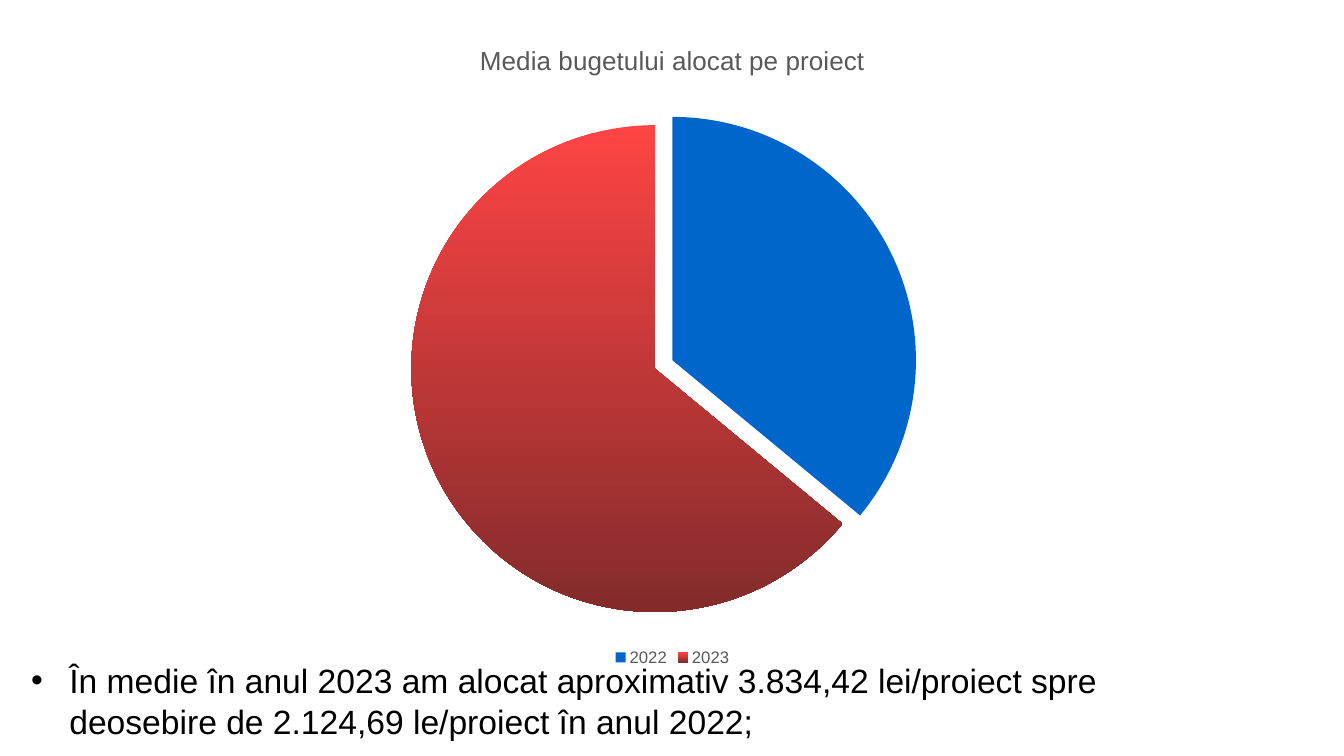
from pptx import Presentation
from pptx.chart.data import CategoryChartData
from pptx.dml.color import RGBColor
from pptx.enum.chart import XL_CHART_TYPE, XL_LEGEND_POSITION
from pptx.oxml import parse_xml
from pptx.oxml.ns import nsdecls
from pptx.util import Inches, Pt

COLORS = {
    "text": "000000",
    "label": "595959",
    "y2022": "0066CC",
    "y2023_top": "FE4444",
    "y2023_bottom": "832B2B",
}
TITLE = "Media bugetului alocat pe proiect"


def style_font(font, size, color):
    font.name = "Arial"
    font.size = Pt(size)
    font.bold = False
    font.color.rgb = RGBColor.from_string(COLORS[color])


prs = Presentation()
prs.slide_width, prs.slide_height = Inches(13.33), Inches(7.5)
s = prs.slides.add_slide(prs.slide_layouts[6])

# Remark under the chart
tb = s.shapes.add_textbox(Inches(0.21), Inches(6.5), Inches(12), Inches(1))
tf = tb.text_frame
tf.word_wrap = True
p = tf.paragraphs[0]
pPr = p._p.get_or_add_pPr()
pPr.set("marL", str(Inches(0.38)))
pPr.set("indent", str(-Inches(0.38)))
pPr.append(parse_xml(f'<a:buFont {nsdecls("a")} typeface="Arial"/>'))
pPr.append(parse_xml(f'<a:buChar {nsdecls("a")} char="•"/>'))
r = p.add_run()
r.text = ("În medie în anul 2023 am alocat aproximativ 3.834,42 lei/proiect "
          "spre deosebire de 2.124,69 le/proiect în anul 2022;")
style_font(r.font, 24, "text")

# Pie chart of the average budget
data = CategoryChartData()
data.categories = ["2022", "2023"]
data.add_series(TITLE, (36, 64))
chart = s.shapes.add_chart(XL_CHART_TYPE.PIE, Inches(0.92), Inches(0.2),
                           Inches(11.5), Inches(6.45), data).chart
style_font(chart.font, 10, "text")

chart.has_title = True
r = chart.chart_title.text_frame.paragraphs[0].add_run()
r.text = TITLE
style_font(r.font, 18.6, "label")
chart.chart_title.include_in_layout = False

chart.has_legend = True
chart.legend.position = XL_LEGEND_POSITION.BOTTOM
chart.legend.include_in_layout = False
style_font(chart.legend.font, 11.9, "label")

plot = chart.plots[0]
plot.vary_by_categories = True
points = plot.series[0].points
fill_2022 = points[0].format.fill
fill_2022.solid()
fill_2022.fore_color.rgb = RGBColor.from_string(COLORS["y2022"])

fill_2023 = points[1].format.fill
fill_2023.gradient()
fill_2023.gradient_angle = 270
for stop, name in zip(fill_2023.gradient_stops, ("y2023_top", "y2023_bottom")):
    stop.color.rgb = RGBColor.from_string(COLORS[name])

# The 2023 slice is pulled out; c:explosion goes before the slice's c:spPr
slice_2023 = plot.series[0]._element.findall("c:dPt", {"c": nsdecls("c").split('"')[1]})[1]
slice_2023.spPr.addprevious(parse_xml(f'<c:explosion {nsdecls("c")} val="8"/>'))

prs.save("out.pptx")
